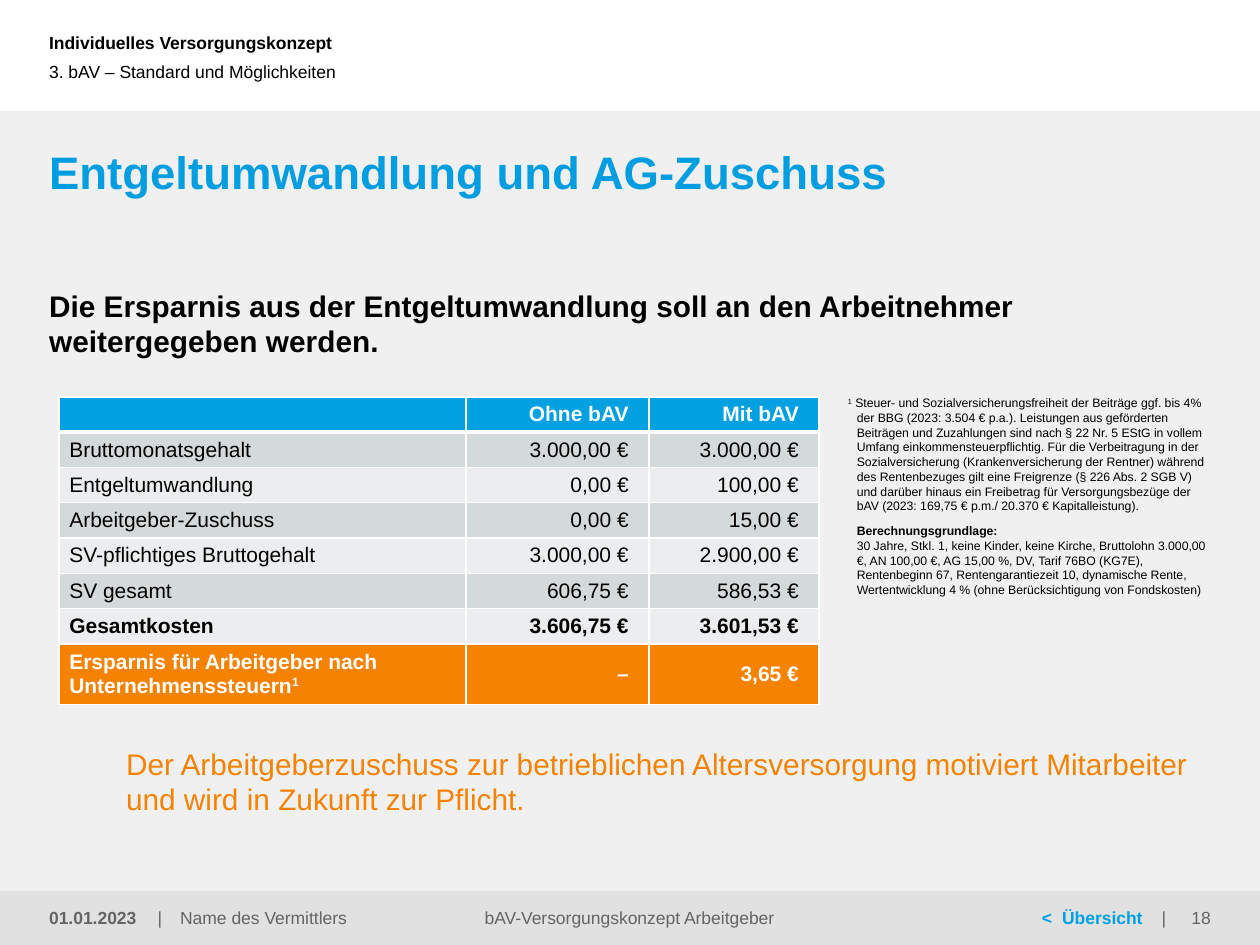
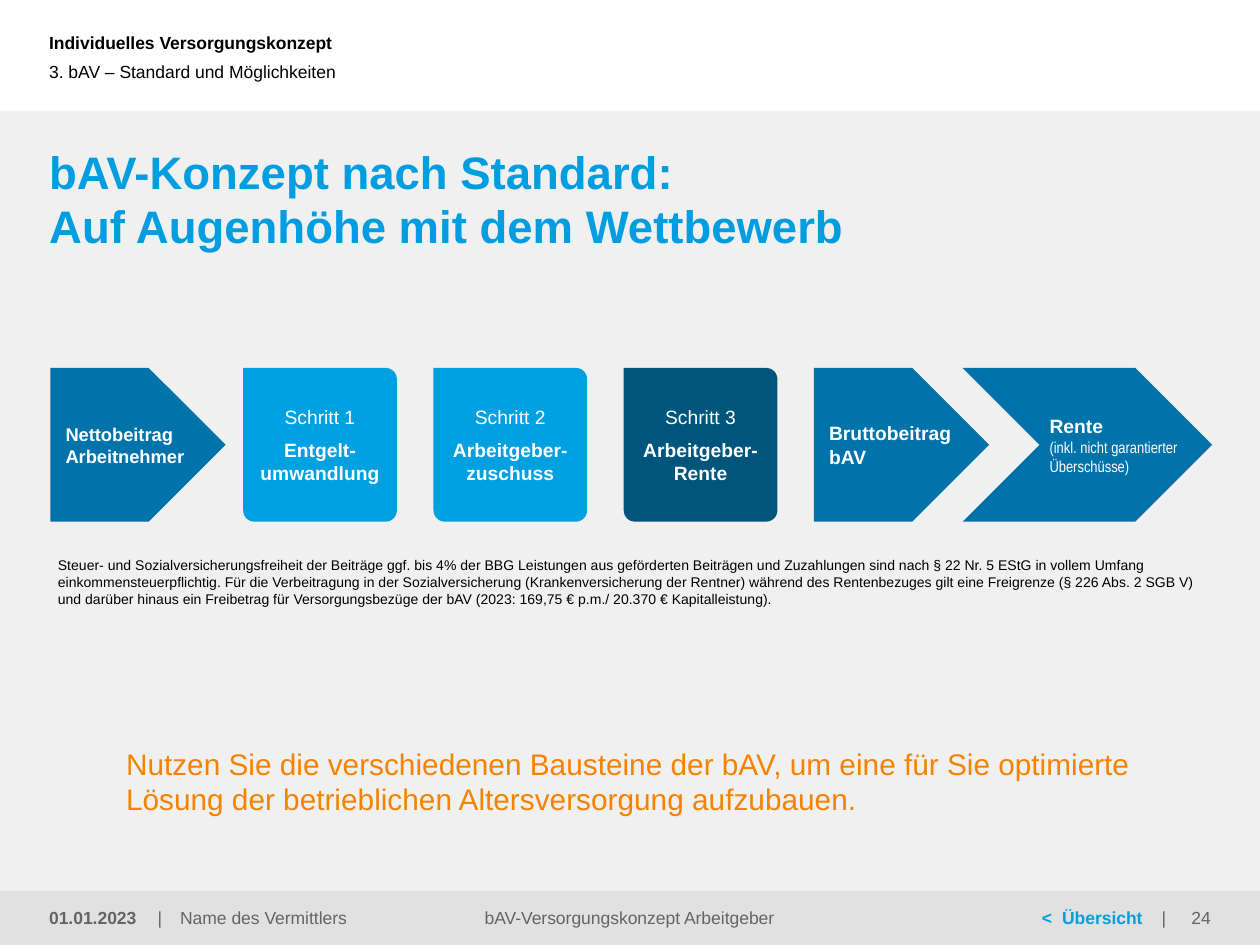
from math import cos, pi, sin

from lxml.etree import SubElement
from pptx import Presentation
from pptx.dml.color import RGBColor
from pptx.enum.shapes import MSO_SHAPE as SHAPE
from pptx.enum.text import MSO_ANCHOR as ANCHOR, PP_ALIGN as ALIGN
from pptx.oxml.ns import qn
from pptx.util import Inches, Pt

WHITE = RGBColor(0xFF, 0xFF, 0xFF)
BLACK = RGBColor(0, 0, 0)
PAGE_GREY = RGBColor(0xF0, 0xF0, 0xF0)
FOOTER_GREY = RGBColor(0xE1, 0xE1, 0xE1)
TEXT_GREY = RGBColor(0x64, 0x64, 0x64)
ROW_DARK = RGBColor(0xD4, 0xD9, 0xDA)
ROW_LIGHT = RGBColor(0xEB, 0xED, 0xEE)
TITLE_BLUE = RGBColor(0x00, 0x9E, 0xE0)
SKY = RGBColor(0x00, 0xA0, 0xE1)
BLUE = RGBColor(0x00, 0x73, 0xAA)
NAVY = RGBColor(0x00, 0x55, 0x7D)
ORANGE = RGBColor(0xF5, 0x82, 0x00)

WIDTH, HEIGHT = 10, 7.5
MARGIN = 0.39
CONTENT_W = WIDTH - 2 * MARGIN
HEADER_H = 0.88
FOOTER_TOP, FOOTER_H = 7.07, 0.43

TAX_RULES = (
    "Leistungen aus geförderten Beiträgen und Zuzahlungen sind nach § 22 Nr. 5 EStG "
    "in vollem Umfang einkommensteuerpflichtig. Für die Verbeitragung in der "
    "Sozialversicherung (Krankenversicherung der Rentner) während des Rentenbezuges "
    "gilt eine Freigrenze (§ 226 Abs. 2 SGB V) und darüber hinaus ein Freibetrag für "
    "Versorgungsbezüge der bAV (2023: 169,75 € p.m./ 20.370 € Kapitalleistung).")
TAX_FREE = "Steuer- und Sozialversicherungsfreiheit der Beiträge ggf. bis 4% der BBG"


class Deck:
    font = "Arial"

    def __init__(self):
        self.prs = Presentation()
        self.prs.slide_width = Inches(WIDTH)
        self.prs.slide_height = Inches(HEIGHT)
        self.slide = None

    def add_slide(self, title, message, number):
        """Start a slide with its header, title, key message and footer."""
        self.slide = self.prs.slides.add_slide(self.prs.slide_layouts[6])
        self.shape(SHAPE.RECTANGLE, 0, HEADER_H, WIDTH, HEIGHT - HEADER_H, PAGE_GREY)
        self.shape(SHAPE.RECTANGLE, 0, FOOTER_TOP, WIDTH, FOOTER_H, FOOTER_GREY)
        middle = ANCHOR.MIDDLE
        self.text(MARGIN, 0, 6.5, 0.67, "Individuelles Versorgungskonzept", 10,
                  bold=True, anchor=middle)
        self.text(MARGIN, 0.25, 6.76, 0.63, "3. bAV – Standard und Möglichkeiten", 10,
                  anchor=middle)
        self.text(MARGIN, 1.14, CONTENT_W, 0.55, title, 26, TITLE_BLUE, bold=True)
        self.text(1, 5.9, 8.61, 0.6, message, 17, ORANGE, anchor=middle)
        self.footer(MARGIN, 0.83, "01.01.2023", bold=True)
        self.footer(1.25, 2.42, "|\tName des Vermittlers", tabs=[0.18])
        self.footer(2.93, 4.13, "bAV-Versorgungskonzept Arbeitgeber", align=ALIGN.CENTER)
        p = self.footer(8.27, 1.03, "<\tÜbersicht", color=SKY, bold=True, tabs=[0.16, 0.95])
        self.run(p, "\t|", 10, TEXT_GREY)
        self.footer(9.16, WIDTH - MARGIN - 9.16, number, align=ALIGN.RIGHT)

    def footer(self, x, w, text, color=TEXT_GREY, **style):
        return self.text(x, FOOTER_TOP, w, FOOTER_H, text, 10, color,
                         anchor=ANCHOR.MIDDLE, **style)

    def run(self, p, text, size, color=BLACK, bold=False, font=None, superscript=False):
        """Add text to a paragraph; each newline becomes a line break."""
        for i, line in enumerate(text.split("\n")):
            if i:
                p.add_line_break()
            if not line:
                continue
            r = p.add_run()
            r.text = line
            r.font.name = font or self.font
            r.font.size = Pt(size)
            r.font.bold = bold
            r.font.color.rgb = color
            if superscript:
                r._r.get_or_add_rPr().set("baseline", "30000")

    def text(self, x, y, w, h, text, size, color=BLACK, bold=False,
             align=ALIGN.LEFT, anchor=ANCHOR.TOP, tabs=()):
        """Add a text box without insets and return its first paragraph."""
        sp = self.slide.shapes.add_textbox(Inches(x), Inches(y), Inches(w), Inches(h))
        tf = sp.text_frame
        tf.word_wrap = True
        tf.vertical_anchor = anchor
        tf.margin_left = tf.margin_right = tf.margin_top = tf.margin_bottom = 0
        p = tf.paragraphs[0]
        p.alignment = align
        if tabs:
            tab_list = SubElement(p._p.get_or_add_pPr(), qn("a:tabLst"))
            for stop in tabs:
                SubElement(tab_list, qn("a:tab"), pos=str(Inches(stop)), algn="l")
        self.run(p, text, size, color, bold)
        return p

    def paint(self, sp, fill):
        sp.shadow.inherit = False
        sp.fill.solid()
        sp.fill.fore_color.rgb = fill
        sp.line.fill.background()
        return sp

    def shape(self, kind, x, y, w, h, fill):
        sp = self.slide.shapes.add_shape(kind, Inches(x), Inches(y), Inches(w), Inches(h))
        return self.paint(sp, fill)

    def card(self, x, y, side, fill, radius=0.09):
        """Add a square with every corner rounded but the top left one."""
        near, far = radius, side - radius
        points = [(0, 0)]
        for cx, cy, start in ((far, near, -pi / 2), (far, far, 0), (near, far, pi / 2)):
            for i in range(9):
                angle = start + i * pi / 16
                points.append((cx + radius * cos(angle), cy + radius * sin(angle)))
        points = [(Inches(x + px), Inches(y + py)) for px, py in points]
        builder = self.slide.shapes.build_freeform(*points[0])
        builder.add_line_segments(points[1:], close=True)
        return self.paint(builder.convert_to_shape(), fill)

    def label(self, sp, paragraphs, align=ALIGN.LEFT, left=0.12):
        """Write paragraphs, each a list of (text, size, bold, font), into a shape."""
        tf = sp.text_frame
        tf.word_wrap = False
        tf.vertical_anchor = ANCHOR.MIDDLE
        tf.margin_left = Inches(left)
        tf.margin_right = tf.margin_top = tf.margin_bottom = Inches(0.08)
        for i, runs in enumerate(paragraphs):
            p = tf.add_paragraph() if i else tf.paragraphs[0]
            p.alignment = align
            p.space_after = Pt(6)
            for text, size, bold, font in runs:
                self.run(p, text, size, WHITE, bold, font)

    def table(self, x, y, col_widths, row_heights, rows):
        """Add a table with a blue head, banded rows, a bold total and an orange result."""
        frame = self.slide.shapes.add_table(
            len(rows), len(col_widths), Inches(x), Inches(y),
            Inches(sum(col_widths)), Inches(sum(row_heights)))
        table = frame.table
        for column, w in zip(table.columns, col_widths):
            column.width = Inches(w)
        last = len(rows) - 1
        for i, (row, h) in enumerate(zip(rows, row_heights)):
            table.rows[i].height = Inches(h)
            fill = {0: SKY, last: ORANGE}.get(i, ROW_DARK if i % 2 else ROW_LIGHT)
            color = WHITE if i in (0, last) else BLACK
            bold = i in (0, last - 1, last)
            for j, text in enumerate(row):
                cell = table.cell(i, j)
                self.borders(cell, top=3 if i == 1 else 1, bottom=1 if i else 3)
                cell.fill.solid()
                cell.fill.fore_color.rgb = fill
                cell.vertical_anchor = ANCHOR.MIDDLE
                cell.margin_left = Inches(0 if j else 0.08)
                cell.margin_right = Inches(0.16 if j else 0.08)
                cell.margin_top = cell.margin_bottom = Inches(0.04)
                p = cell.text_frame.paragraphs[0]
                p.alignment = ALIGN.RIGHT if j else ALIGN.LEFT
                if text:
                    self.run(p, text, 12, color, bold)
                else:
                    SubElement(p._p, qn("a:endParaRPr"), sz="1200")
        return table

    def borders(self, cell, top, bottom):
        tcPr = cell._tc.get_or_add_tcPr()
        for side, width in (("L", 1), ("R", 1), ("T", top), ("B", bottom)):
            ln = SubElement(tcPr, qn(f"a:ln{side}"), w=str(Pt(width)))
            SubElement(SubElement(ln, qn("a:solidFill")), qn("a:srgbClr"), val=str(WHITE))


def savings_slide(deck):
    deck.add_slide(
        "Entgeltumwandlung und AG-Zuschuss",
        "Der Arbeitgeberzuschuss zur betrieblichen Altersversorgung motiviert "
        "Mitarbeiter und wird in Zukunft zur Pflicht.", "18")
    deck.text(MARGIN, 2.28, CONTENT_W, 0.58,
              "Die Ersparnis aus der Entgeltumwandlung soll an den Arbeitnehmer "
              "weitergegeben werden.", 17, bold=True)

    hanging = deck.text(6.73, 3.14, 2.89, 1.79, "", 7)
    deck.run(hanging, "1", 7, superscript=True)
    deck.run(hanging, f" {TAX_FREE} (2023: 3.504 € p.a.). {TAX_RULES}", 7)
    basis = hanging._parent.add_paragraph()
    basis.space_before = Pt(6)
    deck.run(basis, "Berechnungsgrundlage:\n", 7, bold=True)
    deck.run(basis, "30 Jahre, Stkl. 1, keine Kinder, keine Kirche, Bruttolohn 3.000,00 €, "
             "AN 100,00 €, AG 15,00 %, DV, Tarif 76BO (KG7E), Rentenbeginn 67, "
             "Rentengarantiezeit 10, dynamische Rente, Wertentwicklung 4 % "
             "(ohne Berücksichtigung von Fondskosten)", 7)
    for p, indent in ((hanging, -0.07), (basis, 0)):
        pPr = p._p.get_or_add_pPr()
        pPr.set("marL", str(Inches(0.07)))
        pPr.set("indent", str(Inches(indent)))

    rows = [
        ("", "Ohne bAV", "Mit bAV"),
        ("Bruttomonatsgehalt", "3.000,00 €", "3.000,00 €"),
        ("Entgeltumwandlung", "0,00 €", "100,00 €"),
        ("Arbeitgeber-Zuschuss", "0,00 €", "15,00 €"),
        ("SV-pflichtiges Bruttogehalt", "3.000,00 €", "2.900,00 €"),
        ("SV gesamt", "606,75 €", "586,53 €"),
        ("Gesamtkosten", "3.606,75 €", "3.601,53 €"),
        ("Ersparnis für Arbeitgeber nach Unternehmenssteuern", "–", "3,65 €"),
    ]
    table = deck.table(0.47, 3.15, [3.23, 1.45, 1.35], [0.28] * 7 + [0.45], rows)
    result = table.cell(len(rows) - 1, 0).text_frame.paragraphs[0]
    deck.run(result, "1", 12, WHITE, bold=True, superscript=True)


def concept_slide(deck):
    deck.add_slide(
        "bAV-Konzept nach Standard:\nAuf Augenhöhe mit dem Wettbewerb",
        "Nutzen Sie die verschiedenen Bausteine der bAV, um eine für Sie optimierte "
        "Lösung der betrieblichen Altersversorgung aufzubauen.", "24")
    deck.text(0.46, 4.42, 9.04, 0.4, f"{TAX_FREE} {TAX_RULES}", 8)

    top, side, pitch = 2.92, 1.22, 1.51
    steps = [("Entgelt-\numwandlung", SKY), ("Arbeitgeber-\nzuschuss", SKY),
             ("Arbeitgeber-\nRente", NAVY)]
    for i, (name, fill) in enumerate(steps):
        card = deck.card(1.93 + i * pitch, top, side, fill)
        deck.label(card, [[(f"Schritt {i + 1}", 11, False, None)], [(name, 11, True, None)]],
                   ALIGN.CENTER, left=0.08)

    for x, text, size in ((0.4, "Nettobeitrag\nArbeitnehmer", 10.5),
                          (6.46, "Bruttobeitrag\nbAV", 11)):
        arrow = deck.shape(SHAPE.PENTAGON, x, top, 1.39, side, BLUE)
        deck.label(arrow, [[(text, size, True, None)]])
    pension = deck.shape(SHAPE.CHEVRON, 7.64, top, 1.98, side, BLUE)
    deck.label(pension, [[("Rente\n", 11, True, None),
                          ("(inkl. nicht garantierter\nÜberschüsse)", 9, False,
                           "Arial Narrow")]], left=0.08)


def main():
    deck = Deck()
    savings_slide(deck)
    concept_slide(deck)
    deck.prs.save("out.pptx")


if __name__ == "__main__":
    main()
